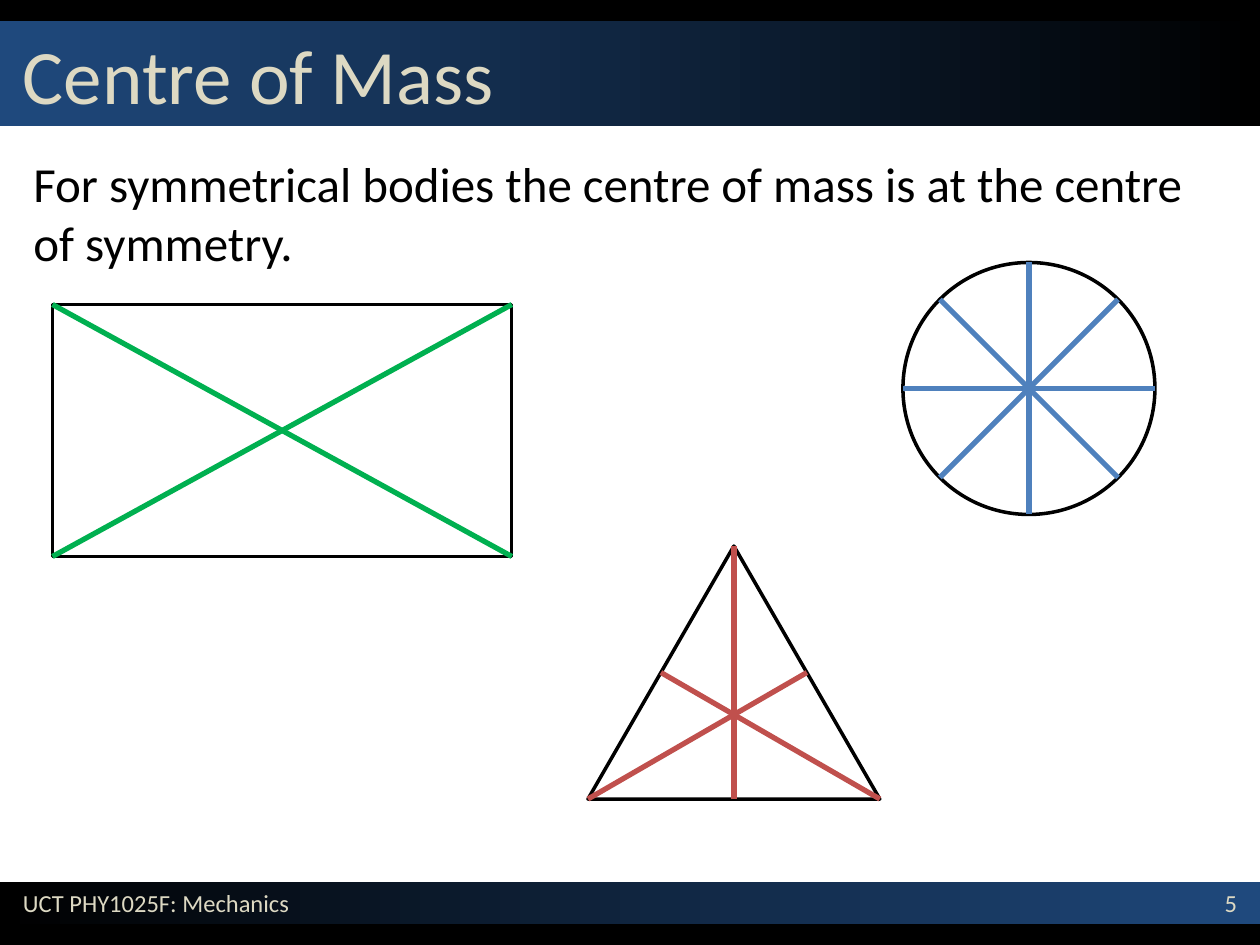
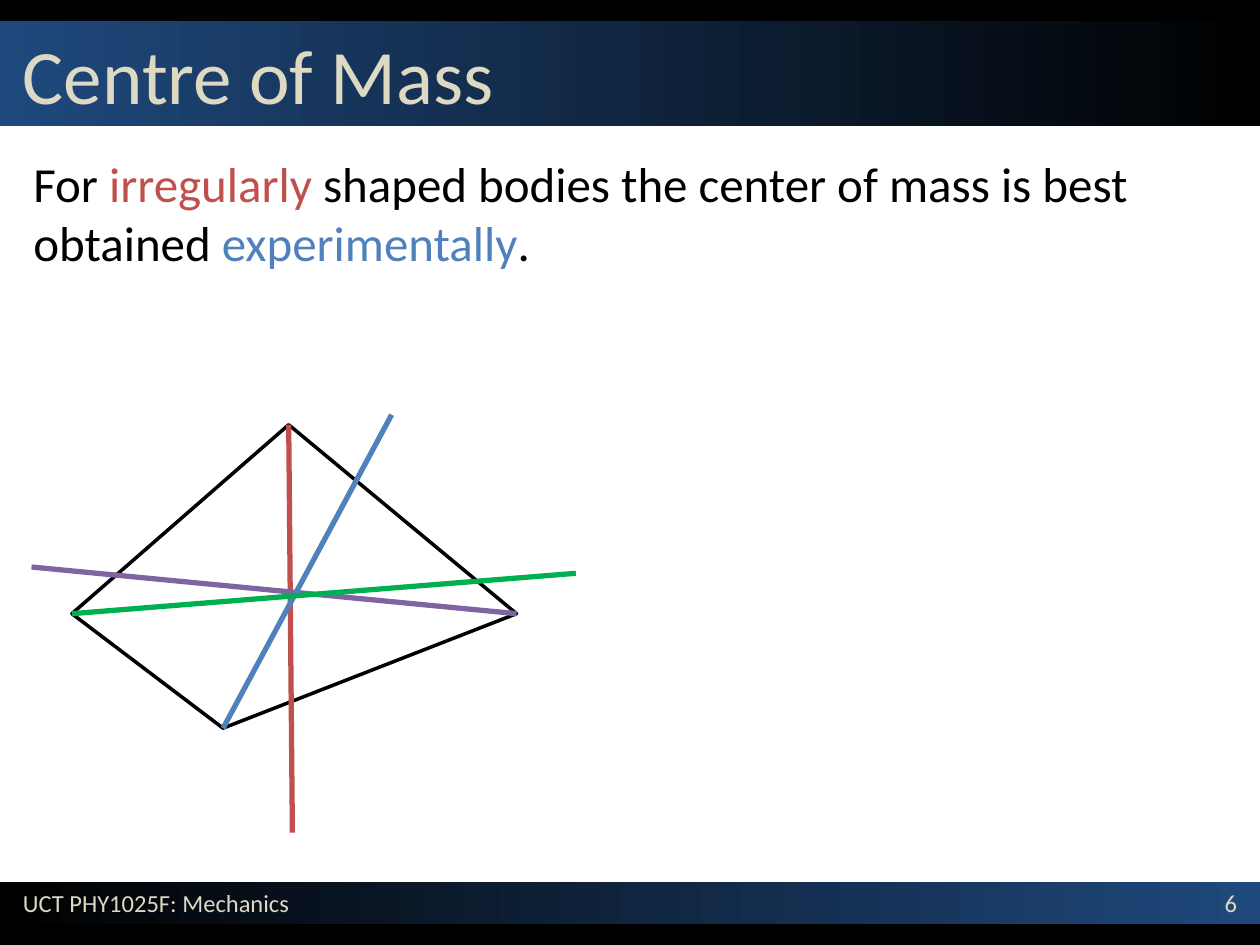
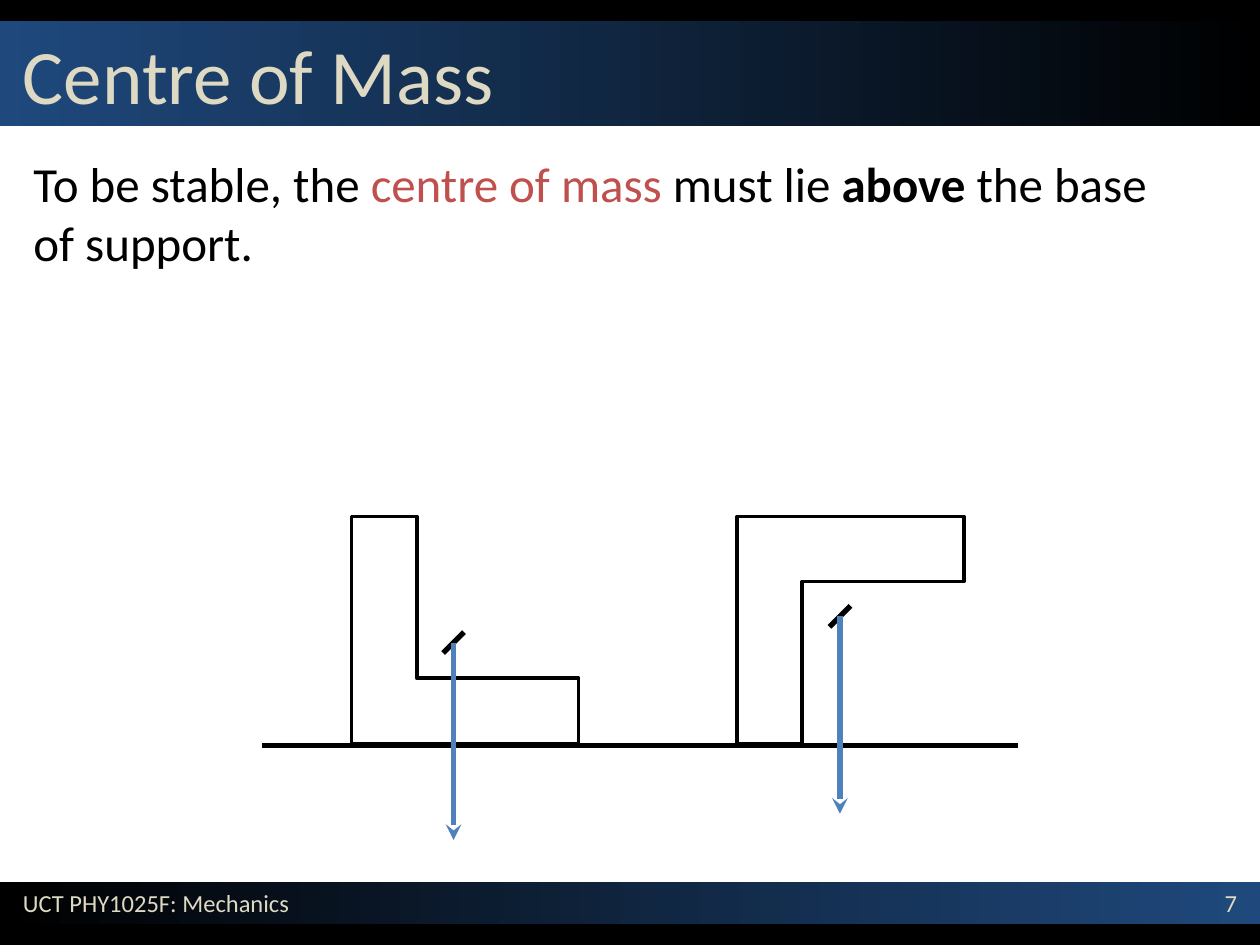
from math import cos, pi, sin

from lxml.etree import SubElement
from pptx import Presentation
from pptx.dml.color import RGBColor
from pptx.enum.shapes import MSO_CONNECTOR, MSO_SHAPE
from pptx.enum.text import MSO_ANCHOR, PP_ALIGN
from pptx.oxml.ns import qn
from pptx.util import Inches, Pt

BLACK = RGBColor(0x00, 0x00, 0x00)
WHITE = RGBColor(0xFF, 0xFF, 0xFF)
NAVY = RGBColor(0x1F, 0x49, 0x7D)
CREAM = RGBColor(0xDD, 0xD9, 0xC3)
RED = RGBColor(0xC0, 0x50, 0x4D)
BLUE = RGBColor(0x4F, 0x81, 0xBD)
GREEN = RGBColor(0x00, 0xB0, 0x50)
PURPLE = RGBColor(0x80, 0x64, 0xA2)

FONT = "Calibri"
TITLE = "Centre of Mass"
FOOTER = "UCT PHY1025F: Mechanics"
FIRST_NUMBER = 5

# The slide is a grid of square cells, twelve to the inch
COLUMNS, ROWS = 120, 90


def cells(count):
    return Inches(count / 12)


def midpoint(first, second):
    return (first[0] + second[0]) / 2, (first[1] + second[1]) / 2


# Kinds of element

def add_text(slide, box, runs, size=28, color=BLACK, align=PP_ALIGN.LEFT,
             anchor=MSO_ANCHOR.TOP, space_before=0):
    """Add one paragraph; each run is (text, format) with color and bold."""
    frame = slide.shapes.add_textbox(*map(cells, box)).text_frame
    frame.word_wrap = True
    frame.vertical_anchor = anchor
    paragraph = frame.paragraphs[0]
    paragraph.alignment = align
    paragraph.space_before = Pt(space_before)
    for text, style in runs:
        run = paragraph.add_run()
        run.text = text
        run.font.name = FONT
        run.font.size = Pt(size)
        run.font.bold = style.get("bold", False)
        run.font.color.rgb = style.get("color", color)


def add_band(slide, top, height, *colors):
    band = slide.shapes.add_shape(
        MSO_SHAPE.RECTANGLE, *map(cells, (0, top, COLUMNS, height)))
    band.shadow.inherit = False
    band.line.fill.background()
    if len(colors) == 1:
        band.fill.solid()
        band.fill.fore_color.rgb = colors[0]
    else:
        band.fill.gradient()
        band.fill.gradient_angle = 0
        for stop, color in zip(band.fill.gradient_stops, colors):
            stop.color.rgb = color


def outline(shape):
    shape.shadow.inherit = False
    shape.fill.solid()
    shape.fill.fore_color.rgb = WHITE
    shape.line.color.rgb = BLACK
    shape.line.width = Pt(2)


def add_body(slide, kind, box):
    outline(slide.shapes.add_shape(kind, *map(cells, box)))


def add_polygon(slide, points):
    corners = [(cells(x), cells(y)) for x, y in points]
    builder = slide.shapes.build_freeform(*corners[0], scale=1.0)
    builder.add_line_segments(corners[1:], close=True)
    outline(builder.convert_to_shape())


def add_line(slide, start, end, color, arrow=False):
    connector = slide.shapes.add_connector(
        MSO_CONNECTOR.STRAIGHT, *map(cells, (*start, *end)))
    connector.line.color.rgb = color
    connector.line.width = Pt(3)
    if arrow:
        SubElement(connector.line._get_or_add_ln(), qn("a:tailEnd"), type="stealth")
    SubElement(connector._element.spPr, qn("a:effectLst"))


def add_lecture_slide(presentation, number, runs, text_width):
    """Add a slide with the shared bands, footer, title and statement."""
    slide = presentation.slides.add_slide(presentation.slide_layouts[6])
    add_band(slide, 0, 4, BLACK)
    add_band(slide, 2, 10, NAVY, BLACK)
    add_band(slide, ROWS - 4, 4, BLACK)
    add_band(slide, ROWS - 6, 4, BLACK, NAVY)
    footer = dict(size=14, color=CREAM, anchor=MSO_ANCHOR.MIDDLE)
    add_text(slide, (106, ROWS - 6, 13, 4), [(str(number), {})],
             align=PP_ALIGN.RIGHT, **footer)
    add_text(slide, (1, ROWS - 6, 70, 4), [(FOOTER, {})], **footer)
    add_text(slide, (1, 2, 118, 10), [(TITLE, {})], size=44, color=CREAM,
             anchor=MSO_ANCHOR.MIDDLE)
    add_text(slide, (2, 14, text_width, 21.5), runs, space_before=6)
    return slide


# Drawings

def draw_symmetrical_bodies(slide):
    rectangle = left, top, width, height = 5, 29, 43.75, 24
    triangle = (56, 52, 27.8, 24.1)
    circle = (86, 25, 24, 24)
    add_body(slide, MSO_SHAPE.RECTANGLE, rectangle)
    add_body(slide, MSO_SHAPE.ISOSCELES_TRIANGLE, triangle)
    add_body(slide, MSO_SHAPE.OVAL, circle)

    # Diagonals
    right, bottom = left + width, top + height
    add_line(slide, (left, top), (right, bottom), GREEN)
    add_line(slide, (left, bottom), (right, top), GREEN)

    # Medians
    left, top, width, height = triangle
    corners = [(left + width / 2, top), (left, top + height),
               (left + width, top + height)]
    for index, corner in enumerate(corners):
        add_line(slide, corner, midpoint(corners[index - 1], corners[index - 2]), RED)

    # Diameters
    left, top, diameter, _ = circle
    radius = diameter / 2
    center_x, center_y = left + radius, top + radius
    for eighth in range(4):
        across = radius * cos(eighth * pi / 4)
        down = radius * sin(eighth * pi / 4)
        add_line(slide, (center_x - across, center_y - down),
                 (center_x + across, center_y + down), BLUE)


def draw_irregular_body(slide):
    # Each corner with the far end and colour of its plumb line
    plumb_lines = [
        ((27.5, 40.45), (27.85, 79.3), RED),
        ((49.2, 58.45), (3, 54), PURPLE),
        ((21.25, 69.35), (37.3, 39.5), BLUE),
        ((6.85, 58.45), (54.85, 54.6), GREEN),
    ]
    add_polygon(slide, [corner for corner, _, _ in plumb_lines])
    for corner, end, color in plumb_lines:
        add_line(slide, corner, end, color)


def draw_stability(slide):
    side, top, arm = 21.6, 49.2, 6.2
    upright = [(0, 0), (0, side), (side, side), (side, side - arm),
               (arm, side - arm), (arm, 0)]
    inverted = [(x, side - y) for x, y in upright]
    add_line(slide, (25, 71), (97, 71), BLACK)
    for left, block in ((33.5, upright), (70.2, inverted)):
        add_polygon(slide, [(left + x, top + y) for x, y in block])

    # Centres of mass and their weights
    centers = [(43.2, 61.2), (80, 58.7)]
    for x, y in centers:
        add_line(slide, (x - 1, y + 1), (x + 1, y - 1), BLACK)
    for x, y in centers:
        add_line(slide, (x, y), (x, y + 18.8), BLUE, arrow=True)


def main():
    presentation = Presentation()
    presentation.slide_width = cells(COLUMNS)
    presentation.slide_height = cells(ROWS)
    lectures = [
        (draw_symmetrical_bodies, 116, [
            ("For symmetrical bodies the centre of mass is at the centre of symmetry.", {}),
        ]),
        (draw_irregular_body, 108, [
            ("For ", {}),
            ("irregularly", {"color": RED}),
            (" shaped bodies the center of mass is best obtained ", {}),
            ("experimentally", {"color": BLUE}),
            (".", {}),
        ]),
        (draw_stability, 112, [
            ("To be stable, the ", {}),
            ("centre of mass ", {"color": RED}),
            ("must lie ", {}),
            ("above", {"bold": True}),
            (" the base of support.", {}),
        ]),
    ]
    for number, (draw, text_width, runs) in enumerate(lectures, FIRST_NUMBER):
        draw(add_lecture_slide(presentation, number, runs, text_width))
    presentation.save("out.pptx")


if __name__ == "__main__":
    main()
